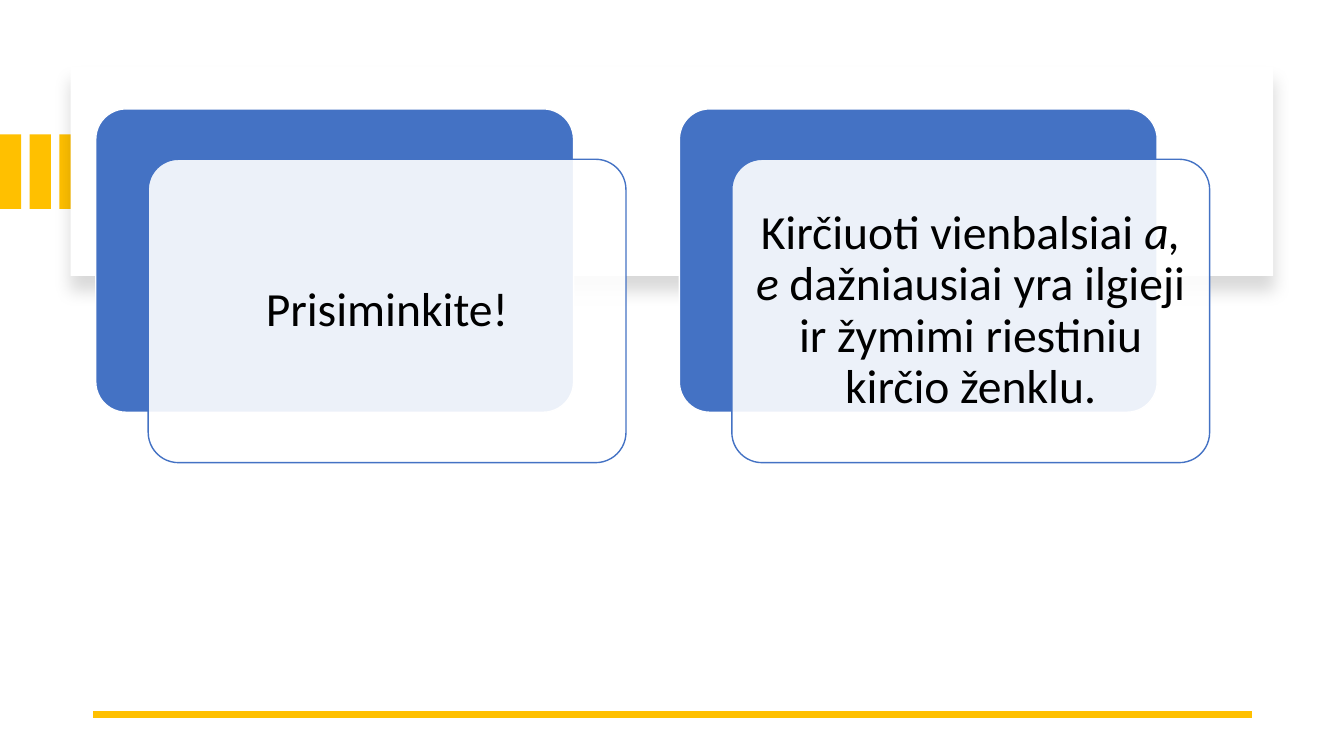
import pptx
import pptx.util
import pptx.oxml
import pptx.oxml.ns
import pptx.dml.color
import pptx.enum.shapes
import pptx.enum.text

HUES = {"gold": "FFC000", "blue": "4472C4", "white": "FFFFFF", "black": "000000"}
KIND = pptx.enum.shapes.MSO_SHAPE
NS = pptx.oxml.ns.nsdecls("a")

deck = pptx.Presentation()
deck.slide_width = pptx.util.Inches(13.33)
deck.slide_height = pptx.util.Inches(7.5)
COL = deck.slide_width / 160
ROW = deck.slide_height / 90
slide = deck.slides.add_slide(deck.slide_layouts[1])
tree = slide.shapes


def span(left, top, wide, high):
    return [round(n * unit) for n, unit in zip((left, top, wide, high), (COL, ROW, COL, ROW))]


def block(kind, area, fill, line=None):
    shape = tree.add_shape(kind, *span(*area))
    shape.shadow.inherit = False
    shape.fill.solid()
    shape.fill.fore_color.rgb = pptx.dml.color.RGBColor.from_string(HUES[fill])
    if line:
        shape.line.color.rgb = pptx.dml.color.RGBColor.from_string(HUES[line])
        shape.line.width = pptx.util.Pt(1)
    else:
        shape.line.fill.background()
    return shape


for step in range(3):
    block(KIND.RECTANGLE, (step * 3.54, 16, 2.52, 8.88), "gold")

panel = block(KIND.RECTANGLE, (8.4, 8, 143.16, 24.84), "white")
glow = panel.fill._xPr.find(pptx.oxml.ns.qn("a:effectLst"))
glow.append(pptx.oxml.parse_xml(
    f'<a:outerShdw {NS} blurRad="{pptx.util.Pt(11)}" dist="{pptx.util.Pt(10)}" '
    f'dir="5400000" algn="t" rotWithShape="0"><a:srgbClr val="{HUES["black"]}">'
    '<a:alpha val="15000"/></a:srgbClr></a:outerShdw>'))

left, top, wide, high = span(149.04, 85.08, -138, 0)
rule = tree.add_connector(
    pptx.enum.shapes.MSO_CONNECTOR.STRAIGHT, left, top, left + wide, top + high)
rule.line.color.rgb = pptx.dml.color.RGBColor.from_string(HUES["gold"])
rule.line.width = pptx.util.Pt(4.5)
rule._element.spPr.append(pptx.oxml.parse_xml(f"<a:effectLst {NS}/>"))

INSET = pptx.util.Inches(0.14)
FRAME = {
    "word_wrap": True,
    "auto_size": pptx.enum.text.MSO_AUTO_SIZE.NONE,
    "vertical_anchor": pptx.enum.text.MSO_ANCHOR.MIDDLE,
    "margin_left": INSET,
    "margin_right": INSET,
    "margin_top": INSET,
    "margin_bottom": INSET,
}
PARA = {
    "alignment": pptx.enum.text.PP_ALIGN.CENTER,
    "line_spacing": 0.9,
    "space_before": pptx.util.Pt(0),
}
FONT = {"name": "Calibri", "size": pptx.util.Pt(34), "bold": False}

CARDS = [
    (tree.title, [("Prisiminkite!", False)]),
    (tree.placeholders[1], [
        ("Kirčiuoti vienbalsiai ", False),
        ("a, e", True),
        (" dažniausiai yra ilgieji ir žymimi riestiniu kirčio ženklu.", False),
    ]),
]
WIDE, HIGH = 56.88, 36.12

for index, (holder, words) in enumerate(CARDS):
    x, y = 11.4 + index * 69.48, 12.96
    back = block(KIND.ROUNDED_RECTANGLE, (x, y, WIDE, HIGH), "blue", "white")
    front = block(KIND.ROUNDED_RECTANGLE, (x + 6.24, y + 6, WIDE, HIGH), "white", "blue")
    for card in (back, front):
        card.adjustments[0] = 0.1
    tint = front.fill._xPr.find(".//" + pptx.oxml.ns.qn("a:srgbClr"))
    tint.append(pptx.oxml.parse_xml(f'<a:alpha {NS} val="90000"/>'))

    area = span(x + 7.32, y + 7.08, WIDE - 2.16, HIGH - 2.16)
    for name, size in zip(("left", "top", "width", "height"), area):
        setattr(holder, name, size)
    tree._spTree.append(holder._element)
    frame = holder.text_frame
    for name, value in FRAME.items():
        setattr(frame, name, value)
    para = frame.paragraphs[0]
    for name, value in PARA.items():
        setattr(para, name, value)
    props = para._p.get_or_add_pPr()
    props.set("marL", "0")
    props.set("indent", "0")
    props.append(pptx.oxml.parse_xml(f"<a:buNone {NS}/>"))
    for text, slant in words:
        run = para.add_run()
        run.text = text
        for name, value in FONT.items():
            setattr(run.font, name, value)
        run.font.italic = slant
        run.font.color.rgb = pptx.dml.color.RGBColor.from_string(HUES["black"])

deck.save("out.pptx")
